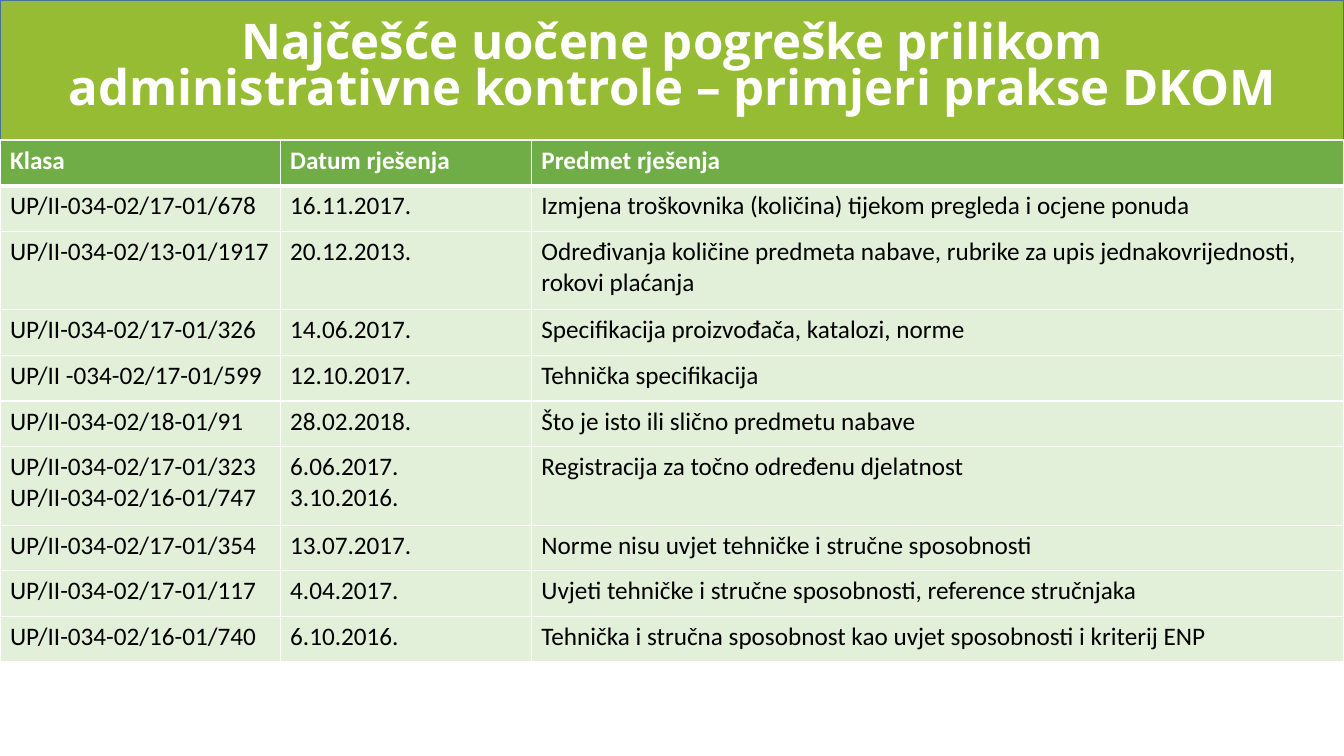
from dataclasses import dataclass

from lxml import etree
from pptx import Presentation
from pptx.dml.color import RGBColor
from pptx.enum.shapes import MSO_SHAPE
from pptx.enum.text import MSO_ANCHOR, PP_ALIGN
from pptx.oxml.ns import qn
from pptx.util import Cm, Pt

RECT = MSO_SHAPE.RECTANGLE
MIDDLE = MSO_ANCHOR.MIDDLE
LEFT, CENTER = PP_ALIGN.LEFT, PP_ALIGN.CENTER

WHITE = RGBColor(0xFF, 0xFF, 0xFF)
BLACK = RGBColor(0x00, 0x00, 0x00)
BANNER_GREEN = RGBColor(0x96, 0xBC, 0x33)
BANNER_LINE = RGBColor(0x43, 0x73, 0x9E)
HEADER_GREEN = RGBColor(0x70, 0xAD, 0x47)
ROW_GREEN = RGBColor(0xE2, 0xF0, 0xD9)

SLIDE_W, SLIDE_H = Cm(33.87), Cm(19.05)
BANNER_H = Cm(3.53)
COLUMN_WIDTHS = (7.06, 6.33, 20.48)
ROW_H, TALL_ROW_H = 1.15, 1.98

TITLE = "Najčešće uočene pogreške prilikom administrativne kontrole – primjeri prakse DKOM"


@dataclass(frozen=True)
class Row:
    klasa: str
    datum: str
    predmet: str
    height: float = ROW_H


ROWS = (
    Row("Klasa", "Datum rješenja", "Predmet rješenja"),
    Row("UP/II-034-02/17-01/678", "16.11.2017.",
        "Izmjena troškovnika (količina) tijekom pregleda i ocjene ponuda"),
    Row("UP/II-034-02/13-01/1917", "20.12.2013.",
        "Određivanja količine predmeta nabave, rubrike za upis jednakovrijednosti, rokovi plaćanja",
        TALL_ROW_H),
    Row("UP/II-034-02/17-01/326", "14.06.2017.", "Specifikacija proizvođača, katalozi, norme"),
    Row("UP/II -034-02/17-01/599", "12.10.2017.", "Tehnička specifikacija"),
    Row("UP/II-034-02/18-01/91", "28.02.2018.", "Što je isto ili slično predmetu nabave"),
    Row("UP/II-034-02/17-01/323\nUP/II-034-02/16-01/747", "6.06.2017.\n3.10.2016.",
        "Registracija za točno određenu djelatnost", TALL_ROW_H),
    Row("UP/II-034-02/17-01/354", "13.07.2017.", "Norme nisu uvjet tehničke i stručne sposobnosti"),
    Row("UP/II-034-02/17-01/117", "4.04.2017.",
        "Uvjeti tehničke i stručne sposobnosti, reference stručnjaka"),
    Row("UP/II-034-02/16-01/740", "6.10.2016.",
        "Tehnička i stručna sposobnost kao uvjet sposobnosti i kriterij ENP"),
)


def write_text(tf, text: str, *, font: str = "Calibri", size: float = 18,
               color: RGBColor = BLACK, bold: bool = False,
               align: PP_ALIGN = LEFT, spacing: float = 1.0) -> None:
    """Fill a text frame with one paragraph per line of text."""
    tf.word_wrap = True
    for i, line in enumerate(text.split("\n")):
        p = tf.add_paragraph() if i else tf.paragraphs[0]
        p.alignment = align
        p.line_spacing = spacing
        r = p.add_run()
        r.text = line
        r.font.name = font
        r.font.size = Pt(size)
        r.font.bold = bold
        r.font.color.rgb = color


def set_borders(cell, top: float, bottom: float) -> None:
    """Draw white cell borders; top and bottom widths are in points."""
    tc_pr = cell._tc.get_or_add_tcPr()
    for side, width in (("L", 1), ("R", 1), ("T", top), ("B", bottom)):
        ln = etree.SubElement(tc_pr, qn(f"a:ln{side}"), w=str(Pt(width)))
        fill = etree.SubElement(ln, qn("a:solidFill"))
        etree.SubElement(fill, qn("a:srgbClr"), val=str(WHITE))


def add_banner(s) -> None:
    sp = s.shapes.add_shape(RECT, 0, 0, SLIDE_W, BANNER_H)
    sp.shadow.inherit = False
    sp.fill.solid()
    sp.fill.fore_color.rgb = BANNER_GREEN
    sp.line.color.rgb = BANNER_LINE
    sp.line.width = Pt(1)

    title = s.shapes.add_textbox(Cm(0.94), Cm(0.61), Cm(32), Cm(2.26))
    title.text_frame.vertical_anchor = MIDDLE
    write_text(title.text_frame, TITLE, font="Open Sans", size=35.1, color=WHITE,
               bold=True, align=CENTER, spacing=0.78)


def add_decisions_table(s) -> None:
    height = Cm(sum(row.height for row in ROWS))
    table = s.shapes.add_table(len(ROWS), len(COLUMN_WIDTHS), 0, BANNER_H,
                               SLIDE_W, height).table
    for column, width in zip(table.columns, COLUMN_WIDTHS):
        column.width = Cm(width)
    for i, row in enumerate(ROWS):
        header = i == 0
        table.rows[i].height = Cm(row.height)
        for j, text in enumerate((row.klasa, row.datum, row.predmet)):
            cell = table.cell(i, j)
            set_borders(cell, top=3 if i == 1 else 1, bottom=3 if header else 1)
            cell.fill.solid()
            cell.fill.fore_color.rgb = HEADER_GREEN if header else ROW_GREEN
            write_text(cell.text_frame, text, bold=header, color=WHITE if header else BLACK)


def main() -> None:
    prs = Presentation()
    prs.slide_width, prs.slide_height = SLIDE_W, SLIDE_H
    s = prs.slides.add_slide(prs.slide_layouts[6])
    add_banner(s)
    add_decisions_table(s)
    prs.save("out.pptx")


if __name__ == "__main__":
    main()
